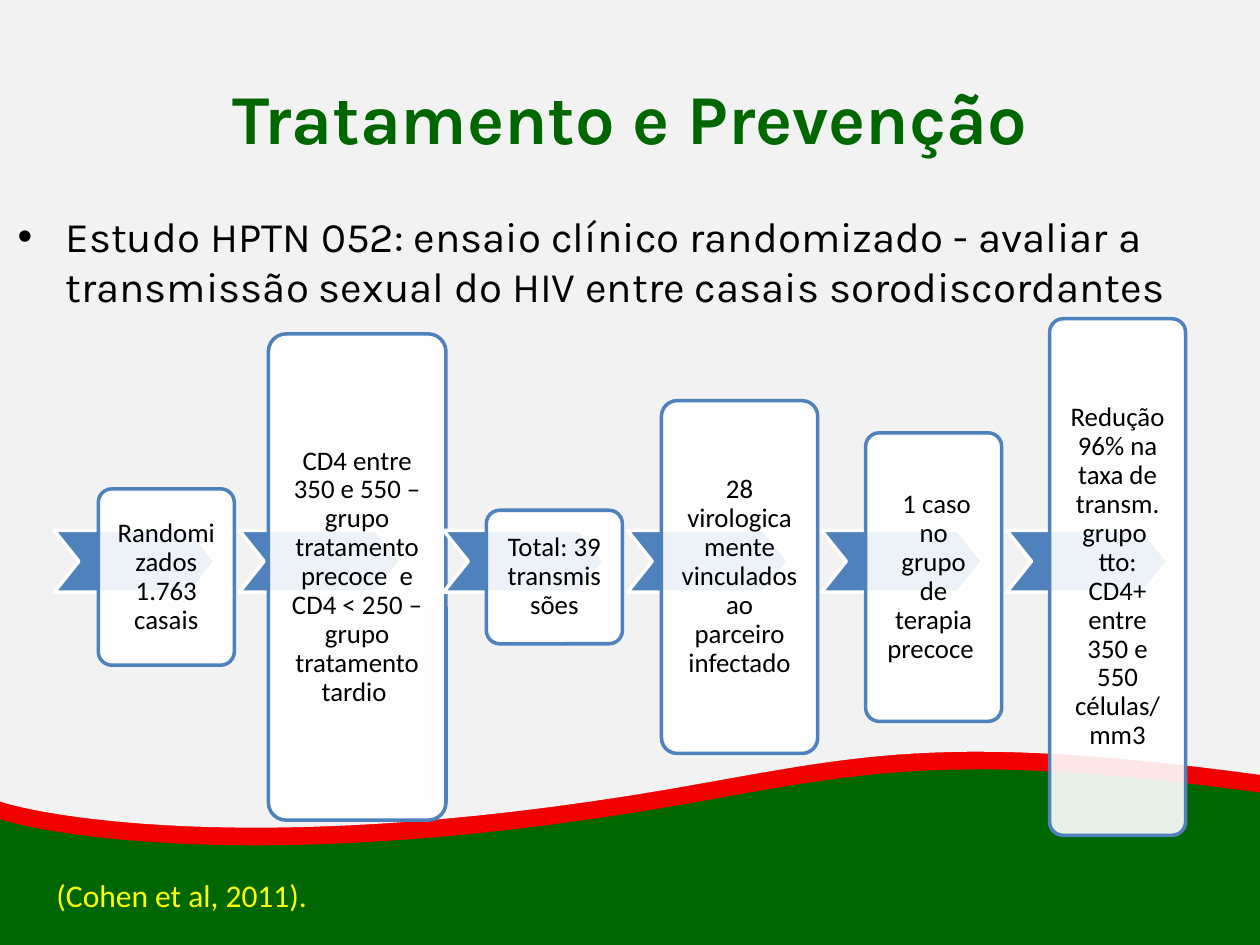
from lxml import etree
from pptx import Presentation
from pptx.dml.color import RGBColor
from pptx.enum import shapes, text
from pptx.oxml import ns
from pptx.util import Inches, Pt

GREEN = RGBColor(0x00, 0x66, 0x00)
RED = RGBColor(0xF2, 0x00, 0x00)
GREY = RGBColor(0xF2, 0xF2, 0xF2)
BLUE = RGBColor(0x4F, 0x81, 0xBD)
WHITE = RGBColor(0xFF, 0xFF, 0xFF)
BLACK = RGBColor(0x00, 0x00, 0x00)
YELLOW = RGBColor(0xFF, 0xFF, 0x00)

TITLE = "Tratamento e Prevenção"
STUDY = ("Estudo HPTN 052: ensaio clínico randomizado - avaliar a "
         "transmissão sexual do HIV entre casais sorodiscordantes ")
CITE = "(Cohen et al, 2011)."
# chevron left, card left, card width, card height, text
STEPS = [
    (0.43, 0.78, 1.08, 1.40, "Randomizados 1.763 casais"),
    (1.90, 2.13, 1.41, 3.86, "CD4 entre 350 e 550 – grupo tratamento precoce  e "
                             "CD4 < 250 – grupo tratamento tardio "),
    (3.52, 3.86, 1.08, 1.06, "Total: 39 transmissões"),
    (4.98, 5.25, 1.24, 2.80, "28 virologicamente vinculados ao parceiro infectado"),
    (6.52, 6.87, 1.08, 2.29, " 1 caso no grupo de terapia precoce "),
    (7.99, 8.33, 1.08, 4.10, "Redução 96% na taxa de transm. grupo  tto: CD4+ "
                             "entre 350 e 550 células/mm3"),
]
MID = 4.58  # centre line of the cards
# two Bezier pieces of the wave, and how far the grey one lies above the red
WAVE = [
    [(0, 6.5), (0.08, 6.54), (1.7, 6.98), (5.03, 6.45)],
    [(5.03, 6.45), (6.7, 6.18), (7.27, 5.92), (10, 6.29)],
]
BAND = 0.14


def bezier(pts, t):
    s = 1 - t
    parts = (s**3, 3 * s * s * t, 3 * s * t * t, t**3)
    return tuple(sum(k * p[i] for k, p in zip(parts, pts)) for i in (0, 1))


def paint(shape, fill, line=None):
    shape.shadow.inherit = False
    shape.fill.solid()
    shape.fill.fore_color.rgb = fill
    if line is None:
        shape.line.fill.background()
    else:
        shape.line.color.rgb = line
        shape.line.width = Pt(2)


def wave(slide, top, rise, fill):
    """Fill the area between a flat top and the wave raised by rise."""
    curve = [bezier(piece, n / 30) for piece in WAVE for n in range(31)]
    path = slide.shapes.build_freeform(0, Inches(top), scale=1.0)
    path.add_line_segments(
        [(Inches(x), Inches(y - rise)) for x, y in curve]
        + [(Inches(10), Inches(top))])
    paint(path.convert_to_shape(), fill)


def write(shape, words, size, color, font="Calibri", bold=False,
          align=text.PP_ALIGN.LEFT, anchor=None, inset=None, wrap=True,
          lines=None, before=None):
    frame = shape.text_frame
    frame.word_wrap = wrap
    if anchor is not None:
        frame.vertical_anchor = anchor
    if inset is not None:
        frame.margin_left = frame.margin_right = Inches(inset)
        frame.margin_top = frame.margin_bottom = Inches(inset)
    para = frame.paragraphs[0]
    para.alignment = align
    para.line_spacing = lines
    para.space_before = before
    run = para.add_run()
    run.text = words
    run.font.size = Pt(size)
    run.font.name = font
    run.font.bold = bold
    run.font.color.rgb = color
    return para


def place(shape, *box):
    shape.left, shape.top, shape.width, shape.height = map(Inches, box)


def step(slide, tip, left, wide, high, words):
    arrow = slide.shapes.add_shape(
        shapes.MSO_SHAPE.CHEVRON, *map(Inches, (tip, 4.21, 1.28, 0.49)))
    arrow.adjustments[0] = 0.4
    paint(arrow, BLUE, WHITE)
    card = slide.shapes.add_shape(
        shapes.MSO_SHAPE.ROUNDED_RECTANGLE,
        *map(Inches, (left, MID - high / 2, wide, high)))
    card.adjustments[0] = 0.1
    paint(card, WHITE, BLUE)
    tone = card.fill._xPr.find(".//" + ns.qn("a:srgbClr"))
    etree.SubElement(tone, ns.qn("a:alpha"), val="90000")
    write(card, words, 15.3, BLACK, align=text.PP_ALIGN.CENTER,
          anchor=text.MSO_ANCHOR.MIDDLE, inset=0.12, lines=0.9)


def main():
    deck = Presentation()
    deck.slide_width, deck.slide_height = Inches(10), Inches(7.5)
    slide = deck.slides.add_slide(deck.slide_layouts[1])
    title, body = slide.placeholders

    ground = slide.shapes.add_shape(
        shapes.MSO_SHAPE.RECTANGLE, *map(Inches, (0, 5.26, 10, 2.24)))
    paint(ground, GREEN)
    wave(slide, 5.03, 0, RED)
    wave(slide, 0, BAND, GREY)
    for holder in (title, body):  # lift above the background
        slide.shapes._spTree.append(holder._element)

    place(title, 0.5, 0.3, 9, 1.25)
    write(title, TITLE, 40, GREEN, font="Karla", bold=True,
          align=text.PP_ALIGN.CENTER, anchor=text.MSO_ANCHOR.MIDDLE)
    place(body, 0.04, 1.62, 9.88, 4.95)
    para = write(body, STUDY, 24, BLACK, font="Karla", before=Pt(4.8))
    props = para._p.get_or_add_pPr()
    props.set("marL", str(Inches(0.38)))
    props.set("indent", str(-Inches(0.38)))
    etree.SubElement(props, ns.qn("a:buChar"), char="•")

    for item in STEPS:
        step(slide, *item)
    cite = slide.shapes.add_textbox(*map(Inches, (0.35, 6.9, 2.27, 0.4)))
    write(cite, CITE, 18, YELLOW, wrap=False)
    deck.save("out.pptx")


if __name__ == "__main__":
    main()
